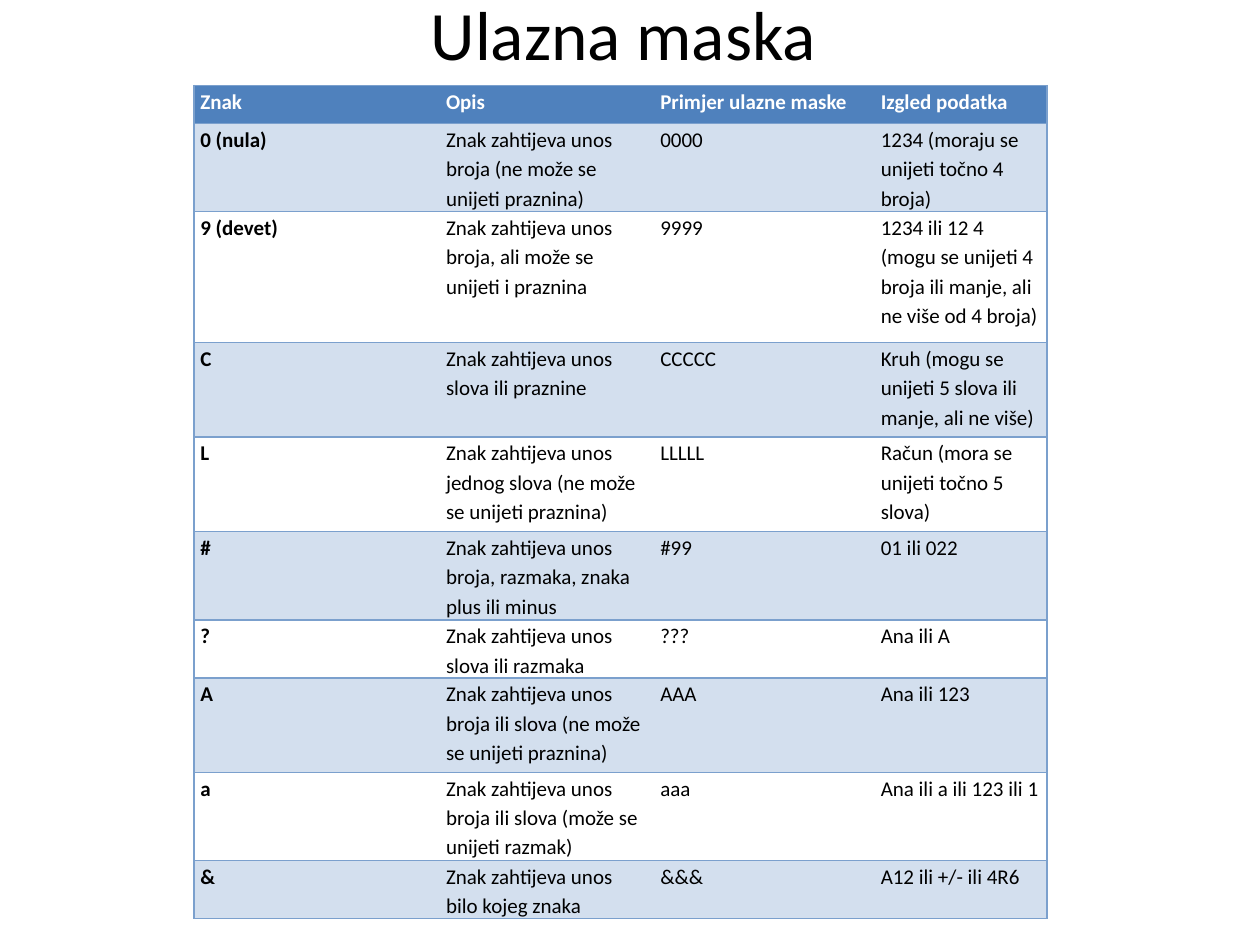
from dataclasses import dataclass

from lxml.etree import SubElement
from pptx import Presentation
from pptx.dml.color import RGBColor
from pptx.enum.text import MSO_ANCHOR as Anchor, PP_ALIGN as Align
from pptx.oxml.ns import qn
from pptx.util import Inches, Pt

FONT = "Calibri"
BLACK, WHITE = "000000", "FFFFFF"
HEADER, BAND, BORDER = "4F81BD", "D3DFEE", "7BA0CD"
COL_WIDTHS = (1.95, 1.7, 1.75, 1.32)
LEFT, TOP, WIDTH = 1.54, 0.68, 6.77


@dataclass
class MaskRow:
    """One table row: its height in inches and its four texts."""
    height: float
    sign: str
    description: str
    mask: str
    result: str

    def texts(self) -> tuple[str, ...]:
        return self.sign, self.description, self.mask, self.result


ROWS = [
    MaskRow(0.3, "Znak", "Opis", "Primjer ulazne maske", "Izgled podatka"),
    MaskRow(0.7, "0 (nula)", "Znak zahtijeva unos broja (ne može se unijeti praznina)",
            "0000", "1234 (moraju se unijeti točno 4 broja)"),
    MaskRow(1.04, "9 (devet)", "Znak zahtijeva unos broja, ali može se unijeti i praznina",
            "9999", "1234 ili 12 4 (mogu se unijeti 4 broja ili manje, ali ne više od 4 broja)"),
    MaskRow(0.75, "C", "Znak zahtijeva unos slova ili praznine",
            "CCCCC", "Kruh (mogu se unijeti 5 slova ili manje, ali ne više)"),
    MaskRow(0.75, "L", "Znak zahtijeva unos jednog slova (ne može se unijeti praznina)",
            "LLLLL", "Račun (mora se unijeti točno 5 slova)"),
    MaskRow(0.7, "#", "Znak zahtijeva unos broja, razmaka, znaka plus ili minus",
            "#99", "01 ili 022"),
    MaskRow(0.46, "?", "Znak zahtijeva unos slova ili razmaka", "???", "Ana ili A"),
    MaskRow(0.75, "A", "Znak zahtijeva unos broja ili slova (ne može se unijeti praznina)",
            "AAA", "Ana ili 123"),
    MaskRow(0.7, "a", "Znak zahtijeva unos broja ili slova (može se unijeti razmak)",
            "aaa", "Ana ili a ili 123 ili 1"),
    MaskRow(0.46, "&", "Znak zahtijeva unos bilo kojeg znaka", "&&&", "A12 ili +/- ili 4R6"),
]


def rgb(color: str) -> RGBColor:
    return RGBColor.from_string(color)


def style_run(r, size: float, color: str, bold: bool = False) -> None:
    r.font.name = FONT
    r.font.size = Pt(size)
    r.font.bold = bold
    r.font.color.rgb = rgb(color)


def set_borders(cell, visible: str) -> None:
    tc_pr = cell._tc.get_or_add_tcPr()
    for side in "LRTB":
        ln = SubElement(tc_pr, qn(f"a:ln{side}"), w=str(Pt(1)))
        if side in visible:
            fill = SubElement(ln, qn("a:solidFill"))
            SubElement(fill, qn("a:srgbClr"), val=BORDER)
        else:
            SubElement(ln, qn("a:noFill"))


def fill_cell(cell, text: str, row: int, col: int) -> None:
    cell.margin_left = cell.margin_right = Inches(0.05)
    cell.margin_top = cell.margin_bottom = 0
    set_borders(cell, "TB" + {0: "L", len(COL_WIDTHS) - 1: "R"}.get(col, ""))
    if row == 0 or row % 2:
        cell.fill.solid()
        cell.fill.fore_color.rgb = rgb(BAND if row else HEADER)
    else:
        cell.fill.background()
    p = cell.text_frame.paragraphs[0]
    p.text = text
    p.line_spacing = 1.15
    style_run(p.runs[0], 12, BLACK if row else WHITE, bold=row == 0 or col == 0)


def add_title(s, text: str) -> None:
    sp = s.shapes.add_textbox(Inches(0.51), 0, Inches(9), Inches(0.52))
    tf = sp.text_frame
    tf.word_wrap = True
    tf.vertical_anchor = Anchor.MIDDLE
    p = tf.paragraphs[0]
    p.text = text
    p.alignment = Align.CENTER
    style_run(p.runs[0], 39.6, BLACK)


def add_mask_table(s, rows: list[MaskRow]) -> None:
    height = sum(row.height for row in rows)
    table = s.shapes.add_table(len(rows), len(COL_WIDTHS), Inches(LEFT), Inches(TOP),
                               Inches(WIDTH), Inches(height)).table
    table.horz_banding = False
    widths = (*COL_WIDTHS[:-1], WIDTH - sum(COL_WIDTHS[:-1]))
    for column, width in zip(table.columns, widths):
        column.width = Inches(width)
    for i, row in enumerate(rows):
        table.rows[i].height = Inches(row.height)
        for j, text in enumerate(row.texts()):
            fill_cell(table.cell(i, j), text, i, j)


def main() -> None:
    """Build the input mask slide."""
    prs = Presentation()
    prs.slide_width, prs.slide_height = Inches(10), Inches(7.5)
    s = prs.slides.add_slide(prs.slide_layouts[6])
    add_title(s, "Ulazna maska ")
    add_mask_table(s, ROWS)
    prs.save("out.pptx")


if __name__ == "__main__":
    main()
